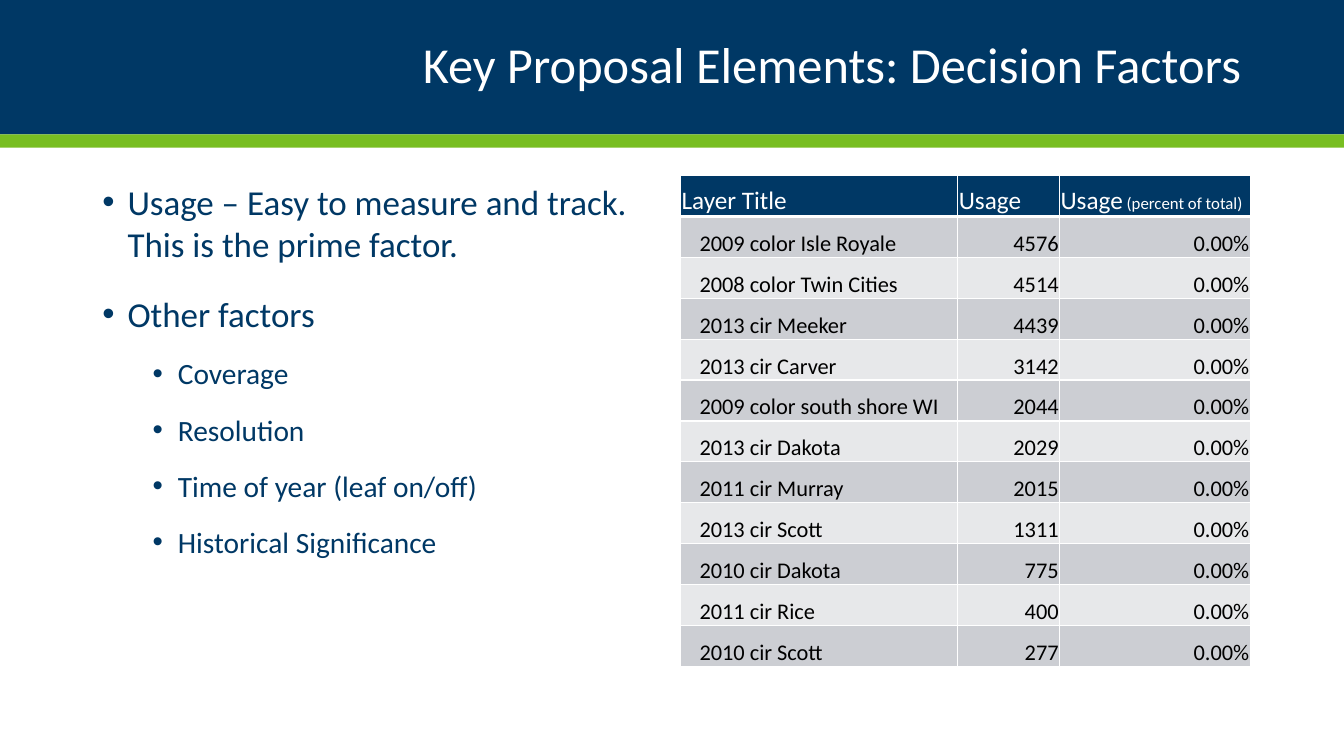
import pptx
import pptx.dml.color
import pptx.enum.shapes
import pptx.enum.text
import pptx.oxml.ns
import pptx.util
from lxml import etree

Pt = pptx.util.Pt
ALIGN = pptx.enum.text.PP_ALIGN
ANCHOR = pptx.enum.text.MSO_ANCHOR
FONT = "Calibri"
NAVY, GREEN, WHITE, BLACK = "003865", "78BE21", "FFFFFF", "000000"
BAND_FILLS = ("CCCED3", "E7E8EA")
SLIDE_WIDTH, SLIDE_HEIGHT = 960, 540

# (level, text)
FACTORS = [
    (0, "Usage – Easy to measure and track. This is the prime factor."),
    (0, "Other factors"),
    (1, "Coverage"),
    (1, "Resolution"),
    (1, "Time of year (leaf on/off)"),
    (1, "Historical Significance"),
]
# Level: (text size, left margin, space before)
LEVELS = {0: (25, 18, 10), 1: (21, 54, 5)}

COLUMN_WIDTHS = (198, 72.7, 136.1)
ROW_HEIGHT = 29.2
HEADER = [
    [("Layer Title", 18)],
    [("Usage", 18)],
    [("Usage", 18), (" (percent of total)", 12)],
]
LAYERS = [
    ("2009 color Isle Royale", 4576),
    ("2008 color Twin Cities", 4514),
    ("2013 cir Meeker", 4439),
    ("2013 cir Carver", 3142),
    ("2009 color south shore WI", 2044),
    ("2013 cir Dakota", 2029),
    ("2011 cir Murray", 2015),
    ("2013 cir Scott", 1311),
    ("2010 cir Dakota", 775),
    ("2011 cir Rice", 400),
    ("2010 cir Scott", 277),
]


def color(hex_value):
    return pptx.dml.color.RGBColor.from_string(hex_value)


def add_child(parent, tag, **attributes):
    return etree.SubElement(parent, pptx.oxml.ns.qn(tag), attributes)


def add_run(para, text, size, text_color):
    span = para.add_run()
    span.text = text
    span.font.name = FONT
    span.font.size = Pt(size)
    span.font.color.rgb = color(text_color)


def add_band(page, top, height, fill):
    band = page.shapes.add_shape(
        pptx.enum.shapes.MSO_SHAPE.RECTANGLE, 0, Pt(top), Pt(SLIDE_WIDTH), Pt(height))
    band.shadow.inherit = False
    band.fill.solid()
    band.fill.fore_color.rgb = color(fill)
    band.line.fill.background()


def add_text_box(page, left, top, width, height, anchor):
    box = page.shapes.add_textbox(Pt(left), Pt(top), Pt(width), Pt(height))
    box.text_frame.word_wrap = True
    box.text_frame.vertical_anchor = anchor
    return box


def add_title(page, text):
    box = add_text_box(page, 66, 12, 828, 72, ANCHOR.MIDDLE)
    para = box.text_frame.paragraphs[0]
    para.alignment = ALIGN.RIGHT
    para.line_spacing = 0.9
    add_run(para, text, 36, WHITE)


def set_bullet(para, margin):
    properties = para._p.get_or_add_pPr()
    properties.set("marL", str(Pt(margin)))
    properties.set("indent", str(Pt(-18)))
    add_child(add_child(properties, "a:buClr"), "a:srgbClr", val=NAVY)
    add_child(properties, "a:buFont", typeface="Arial")
    add_child(properties, "a:buChar", char="•")


def add_bullets(page, items):
    box = add_text_box(page, 66, 125.3, 408, 361, ANCHOR.TOP)
    box.fill.solid()
    box.fill.fore_color.rgb = color(WHITE)
    frame = box.text_frame
    for index, (level, text) in enumerate(items):
        para = frame.paragraphs[0] if index == 0 else frame.add_paragraph()
        size, margin, space_before = LEVELS[level]
        para.level = level
        set_bullet(para, margin)
        para.space_before = Pt(space_before if index else 0)
        para.space_after = Pt(10)
        add_run(para, text, size, NAVY)


def set_borders(cell, top, bottom):
    properties = cell._tc.get_or_add_tcPr()
    for side, width in (("L", 1), ("R", 1), ("T", top), ("B", bottom)):
        line = add_child(properties, "a:ln" + side, w=str(Pt(width)))
        add_child(add_child(line, "a:solidFill"), "a:srgbClr", val=WHITE)


def fill_cell(cell, runs, text_color, fill, alignment, margin_left=0.7, top=1, bottom=1):
    set_borders(cell, top, bottom)
    cell.fill.solid()
    cell.fill.fore_color.rgb = color(fill)
    cell.vertical_anchor = ANCHOR.BOTTOM
    cell.margin_left = Pt(margin_left)
    cell.margin_top = cell.margin_right = Pt(0.7)
    cell.margin_bottom = 0
    para = cell.text_frame.paragraphs[0]
    para.alignment = alignment
    for text, size in runs:
        add_run(para, text, size, text_color)


def add_usage_table(page):
    row_count = len(LAYERS) + 1
    frame = page.shapes.add_table(
        row_count, len(COLUMN_WIDTHS), Pt(486.2), Pt(125.5),
        Pt(sum(COLUMN_WIDTHS)), Pt(ROW_HEIGHT * row_count))
    table = frame.table
    for column, width in zip(table.columns, COLUMN_WIDTHS):
        column.width = Pt(width)
    for row in table.rows:
        row.height = Pt(ROW_HEIGHT)

    for column, runs in enumerate(HEADER):
        fill_cell(table.cell(0, column), runs, WHITE, NAVY, ALIGN.LEFT, bottom=3)
    for row, (layer, usage) in enumerate(LAYERS, start=1):
        for column, text in enumerate((layer, str(usage), "0.00%")):
            fill_cell(
                table.cell(row, column), [(text, 16)], BLACK, BAND_FILLS[(row - 1) % 2],
                ALIGN.RIGHT if column else ALIGN.LEFT,
                margin_left=0.7 if column else 13.5,
                top=3 if row == 1 else 1)


def main():
    deck = pptx.Presentation()
    deck.slide_width, deck.slide_height = Pt(SLIDE_WIDTH), Pt(SLIDE_HEIGHT)
    page = deck.slides.add_slide(deck.slide_layouts[6])

    # Title banner
    add_band(page, 0, 96, NAVY)
    add_band(page, 96, 9.4, GREEN)
    add_title(page, "Key Proposal Elements: Decision Factors")

    # Decision factors and usage figures
    add_bullets(page, FACTORS)
    add_usage_table(page)

    deck.save("out.pptx")


if __name__ == "__main__":
    main()
